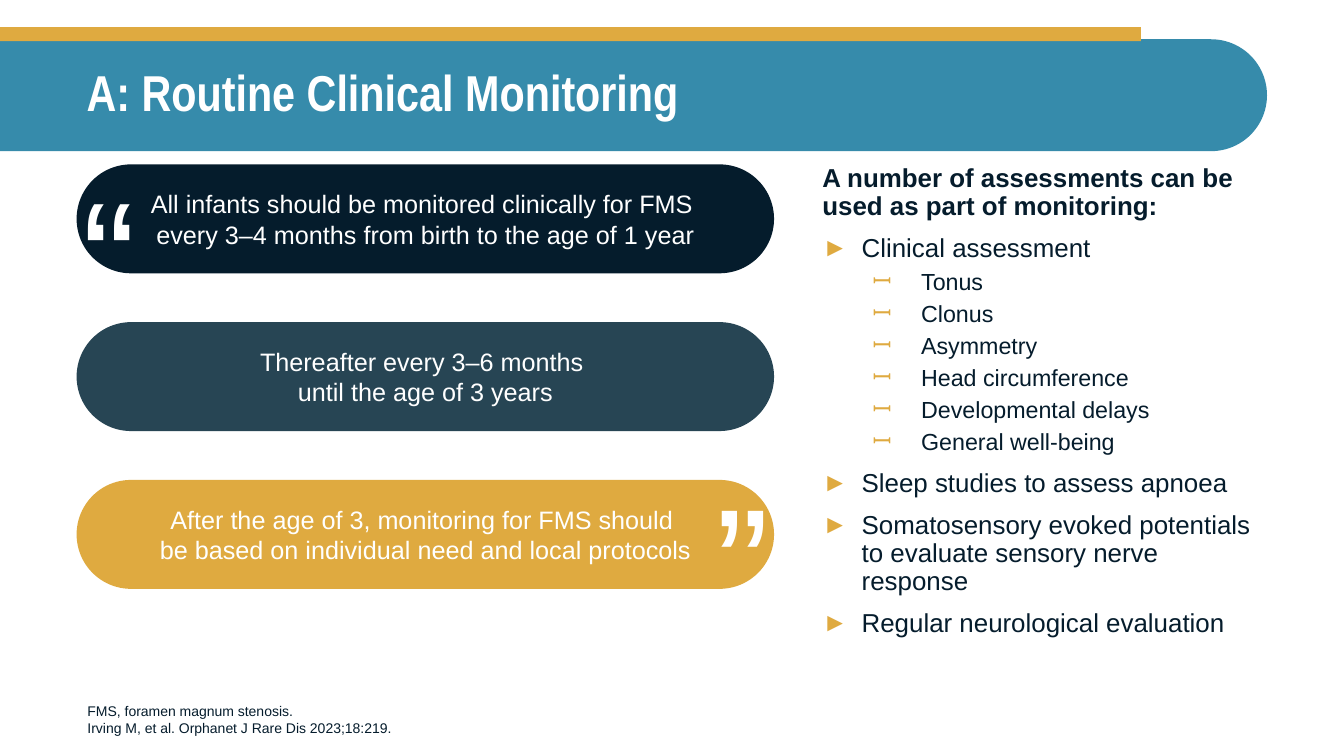
"""Build the slide on routine clinical monitoring."""
import dataclasses
import typing

import lxml.etree
import pptx
import pptx.dml.color
import pptx.enum.shapes
import pptx.enum.text
import pptx.oxml.ns
import pptx.slide
import pptx.util

Pt = pptx.util.Pt
Kind = pptx.enum.shapes.MSO_SHAPE
Align = pptx.enum.text.PP_ALIGN
Anchor = pptx.enum.text.MSO_ANCHOR
Fit = pptx.enum.text.MSO_AUTO_SIZE


@dataclasses.dataclass(frozen=True)
class Theme:
    navy: str = "051C2C"
    slate: str = "274554"
    teal: str = "368BAB"
    gold: str = "DFAA40"
    white: str = "FFFFFF"
    font: str = "Arial"
    narrow: str = "Arial Narrow"
    head: float = 36
    body: float = 18.5
    minor: float = 16.6
    pill: float = 18
    note: float = 10
    quote: float = 115


class Box(typing.NamedTuple):
    left: float
    top: float
    width: float
    height: float


class Pill(typing.NamedTuple):
    text: str
    fill: str


class Mark(typing.NamedTuple):
    box: Box
    turn: float


class Style(typing.NamedTuple):
    size: float
    space: float
    bold: bool = False
    level: int = 0
    sign: str = ""
    margin: float = 0
    hang: float = 0


class Item(typing.NamedTuple):
    text: str
    style: Style


THEME = Theme()
LEAD = Style(THEME.body, 10, bold=True)
MAIN = Style(THEME.body, 10, sign="►", margin=28.1, hang=28.1)
SUB = Style(THEME.minor, 5, level=1, sign="ꟷ", margin=70.6, hang=34.6)

PILLS = [
    Pill("All infants should be monitored clinically for FMS \n"
         "every 3–4 months from birth to the age of 1 year", THEME.navy),
    Pill("Thereafter every 3–6 months \nuntil the age of 3 years", THEME.slate),
    Pill("After the age of 3, monitoring for FMS should \n"
         "be based on individual need and local protocols", THEME.gold),
]
PILL_BOX = Box(54.7, 117.4, 498.2, 77.8)
PILL_STEP = 112.7

MARKS = [Mark(Box(51.8, 106.6, 53.3, 146.9), 0),
         Mark(Box(503.3, 283.7, 53.3, 146.9), 180)]

ITEMS = [
    Item("A number of assessments can be used as part of monitoring:", LEAD),
    Item("Clinical assessment", MAIN),
    Item("Tonus", SUB),
    Item("Clonus", SUB),
    Item("Asymmetry", SUB),
    Item("Head circumference", SUB),
    Item("Developmental delays", SUB),
    Item("General well-being", SUB),
    Item("Sleep studies to assess apnoea", MAIN),
    Item("Somatosensory evoked potentials to evaluate sensory nerve response", MAIN),
    Item("Regular neurological evaluation", MAIN),
]
NOTES = ["FMS, foramen magnum stenosis.",
         "Irving M, et al. Orphanet J Rare Dis 2023;18:219."]


def paint(code: str) -> pptx.dml.color.RGBColor:
    return pptx.dml.color.RGBColor.from_string(code)


def place(shape: typing.Any, box: Box) -> None:
    shape.left, shape.top, shape.width, shape.height = map(Pt, box)


def write(para: typing.Any, text: str, *, size: float, color: str = THEME.navy,
          font: str = THEME.font, bold: bool = False, align: typing.Any = Align.LEFT,
          lines: float = 1, space: float = 0) -> None:
    para.text = text
    para.alignment = align
    para.line_spacing = lines
    para.space_before = Pt(space)
    for run in para.runs:
        run.font.size = Pt(size)
        run.font.name = font
        run.font.bold = bold
        run.font.color.rgb = paint(color)


def add_sign(para: typing.Any, style: Style) -> None:
    props = para._p.get_or_add_pPr()
    props.set("marL", str(Pt(style.margin)))
    props.set("indent", str(-Pt(style.hang)))
    name = pptx.oxml.ns.qn
    color = lxml.etree.SubElement(props, name("a:buClr"))
    lxml.etree.SubElement(color, name("a:srgbClr"), val=THEME.gold)
    lxml.etree.SubElement(props, name("a:buFont"), typeface=THEME.font)
    lxml.etree.SubElement(props, name("a:buChar"), char=style.sign)


def add_form(slide: pptx.slide.Slide, kind: Kind, box: Box, fill: str) -> typing.Any:
    form = slide.shapes.add_shape(kind, *map(Pt, box))
    form.shadow.inherit = False
    form.fill.solid()
    form.fill.fore_color.rgb = paint(fill)
    form.line.fill.background()
    return form


def add_text(slide: pptx.slide.Slide, box: Box, wrap: bool = True) -> typing.Any:
    shape = slide.shapes.add_textbox(*map(Pt, box))
    shape.text_frame.word_wrap = wrap
    return shape


def add_head(slide: pptx.slide.Slide) -> None:
    band = add_form(slide, Kind.ROUND_2_SAME_RECTANGLE,
                    Box(412.6, -384.5, 79.9, 905), THEME.teal)
    band.adjustments[0], band.adjustments[1] = 0, 0.5
    band.rotation = 270
    add_form(slide, Kind.RECTANGLE, Box(0, 19.4, 815, 10), THEME.gold)
    title = slide.shapes.title
    place(title, Box(54.7, 28.1, 850.3, 79.2))
    frame = title.text_frame
    frame.auto_size = Fit.NONE
    frame.vertical_anchor = Anchor.MIDDLE
    write(frame.paragraphs[0], "A: Routine Clinical Monitoring", size=THEME.head,
          color=THEME.white, font=THEME.narrow, bold=True, lines=0.9)
    slide.shapes._spTree.append(title.element)


def add_list(slide: pptx.slide.Slide) -> None:
    frame = add_text(slide, Box(580.3, 114.5, 325.4, 357.1)).text_frame
    for rank, (text, style) in enumerate(ITEMS):
        para = frame.add_paragraph() if rank else frame.paragraphs[0]
        para.level = style.level
        if style.sign:
            add_sign(para, style)
        write(para, text, size=style.size, bold=style.bold, lines=0.9,
              space=style.space if rank else 0)


def add_notes(slide: pptx.slide.Slide) -> None:
    frame = add_text(slide, Box(55.4, 488.9, 711.4, 40.3)).text_frame
    frame.vertical_anchor = Anchor.BOTTOM
    for rank, text in enumerate(NOTES):
        para = frame.add_paragraph() if rank else frame.paragraphs[0]
        write(para, text, size=THEME.note)


def add_pills(slide: pptx.slide.Slide) -> None:
    for rank, pill in enumerate(PILLS):
        box = PILL_BOX._replace(top=PILL_BOX.top + rank * PILL_STEP)
        form = add_form(slide, Kind.ROUNDED_RECTANGLE, box, pill.fill)
        form.adjustments[0] = 0.5
        form.text_frame.word_wrap = True
        form.text_frame.vertical_anchor = Anchor.MIDDLE
        write(form.text_frame.paragraphs[0], pill.text, size=THEME.pill,
              color=THEME.white, align=Align.CENTER)
    for mark in MARKS:
        shape = add_text(slide, mark.box, wrap=False)
        shape.rotation = mark.turn
        shape.text_frame.auto_size = Fit.SHAPE_TO_FIT_TEXT
        write(shape.text_frame.paragraphs[0], "“", size=THEME.quote, color=THEME.white)


def main() -> None:
    deck = pptx.Presentation()
    deck.slide_width, deck.slide_height = Pt(960), Pt(540)
    slide = deck.slides.add_slide(deck.slide_layouts[5])
    add_head(slide)
    add_list(slide)
    add_notes(slide)
    add_pills(slide)
    deck.save("out.pptx")


if __name__ == "__main__":
    main()
